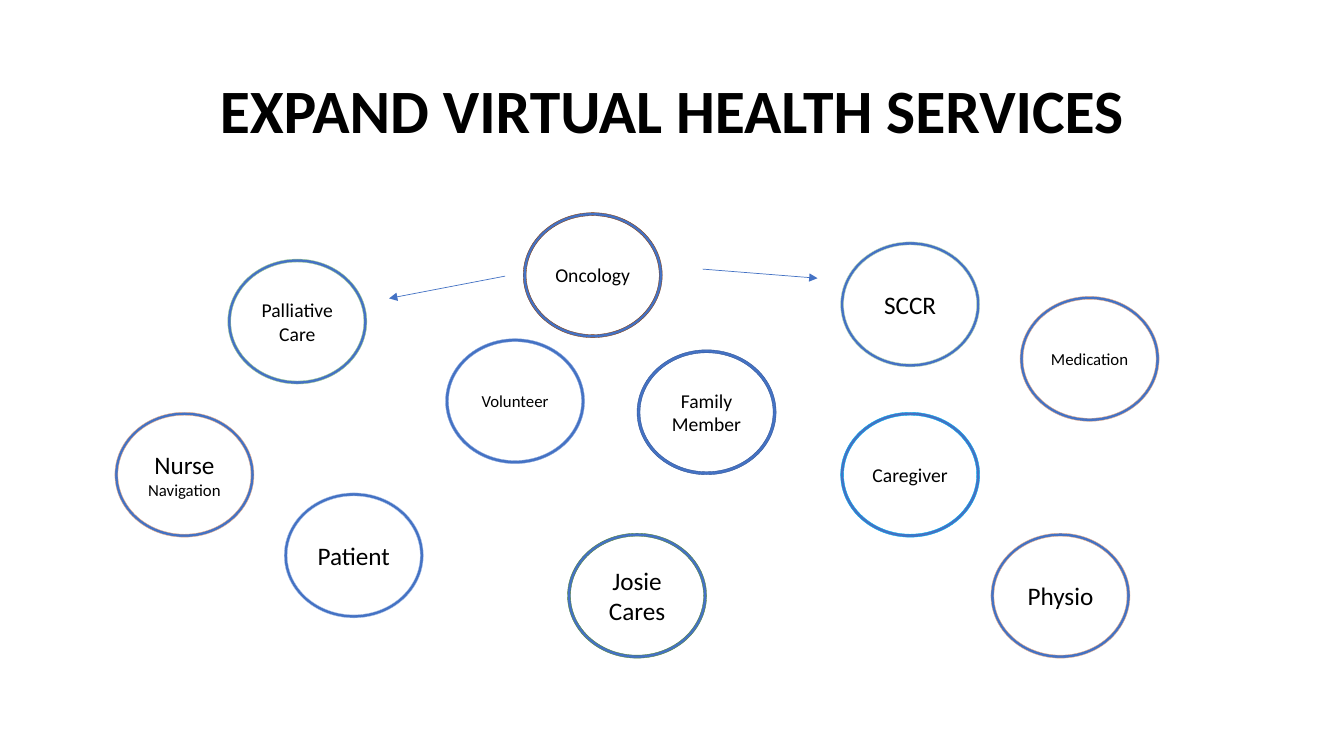
from pptx import Presentation
from pptx import util as u
from pptx.dml.color import RGBColor
from pptx.enum import shapes, text
from pptx.oxml.ns import qn
from lxml import etree

BLACK = RGBColor(0x00, 0x00, 0x00)
BLUE = RGBColor(0x44, 0x72, 0xC4)
PALE_BLUE = RGBColor(0xB4, 0xC7, 0xE7)
MID_BLUE = RGBColor(0x8F, 0xAA, 0xDC)
DARK_BLUE = RGBColor(0x32, 0x54, 0x91)
SKY = RGBColor(0x00, 0xB0, 0xF0)
PALE_GREEN = RGBColor(0xC5, 0xE0, 0xB4)
GREEN = RGBColor(0xA9, 0xD1, 0x8E)
DARK_GREEN = RGBColor(0x54, 0x82, 0x35)
ORANGE = RGBColor(0xF4, 0xB1, 0x83)
BROWN = RGBColor(0x84, 0x3C, 0x0B)

presentation = Presentation()
presentation.slide_width = u.Inches(13.33)
presentation.slide_height = u.Inches(7.5)
slide = presentation.slides.add_slide(presentation.slide_layouts[6])


def place(*shares):
    """Turn alternating percentages of slide width and height into lengths."""
    sides = (presentation.slide_width, presentation.slide_height)
    return [int(sides[i % 2] * share / 100) for i, share in enumerate(shares)]


def write(shape, runs, bold=False, spacing=1.0):
    """Fill a shape with one centred paragraph of (wording, size) runs."""
    frame = shape.text_frame
    frame.word_wrap = True
    frame.vertical_anchor = text.MSO_ANCHOR.MIDDLE
    paragraph = frame.paragraphs[0]
    paragraph.alignment = text.PP_ALIGN.CENTER
    paragraph.line_spacing = spacing
    for wording, size in runs:
        run = paragraph.add_run()
        run.text = wording
        run.font.name = "Calibri"
        run.font.size = u.Pt(size)
        run.font.bold = bold
        run.font.color.rgb = BLACK


# Title
title = slide.shapes.add_textbox(*place(6.9, 5.33, 86.25, 19.33))
write(title, [("EXPAND VIRTUAL HEALTH SERVICES", 44)], bold=True, spacing=0.9)

# Rings: left and top in percent of the slide, outline, runs
RING_SIZE = (10.35, 16.53)
rings = [
    (21.15, 65.2, PALE_BLUE, [("Patient", 18)]),
    (47.4, 46.27, DARK_BLUE, [("Family Member", 14)]),
    (33.15, 44.8, MID_BLUE, [("Volunteer", 12)]),
    (62.55, 54.53, SKY, [("Caregiver", 14)]),
    (16.95, 34.27, GREEN, [("Palliative Care", 14)]),
    (42.23, 70.53, DARK_GREEN, [("Josie Cares", 18)]),
    (62.55, 32, PALE_GREEN, [("SCCR", 18)]),
    (75.9, 39.2, ORANGE, [("Medication", 12)]),
    (73.73, 70.53, ORANGE, [("Physio", 18)]),
    (38.93, 28.13, BROWN, [("Oncology", 14)]),
    (8.55, 54.53, ORANGE, [("Nurse ", 18), ("Navigation", 12)]),
]
for left, top, outline, runs in rings:
    ring = slide.shapes.add_shape(shapes.MSO_SHAPE.DONUT, *place(left, top, *RING_SIZE))
    ring.adjustments[0] = 0.024
    ring.shadow.inherit = False
    ring.fill.solid()
    ring.fill.fore_color.rgb = BLUE
    ring.line.color.rgb = outline
    ring.line.width = u.Pt(0.25)
    write(ring, runs)

# Arrows from Oncology to Palliative Care and SCCR
for ends in [(37.58, 36.53, 28.95, 39.47), (52.28, 35.6, 60.83, 36.8)]:
    arrow = slide.shapes.add_connector(shapes.MSO_CONNECTOR.STRAIGHT, *place(*ends))
    arrow.line.color.rgb = BLUE
    arrow.line.width = u.Pt(0.5)
    etree.SubElement(arrow.line._get_or_add_ln(), qn("a:tailEnd"), type="triangle")
    etree.SubElement(arrow._element.spPr, qn("a:effectLst"))

presentation.save("out.pptx")
